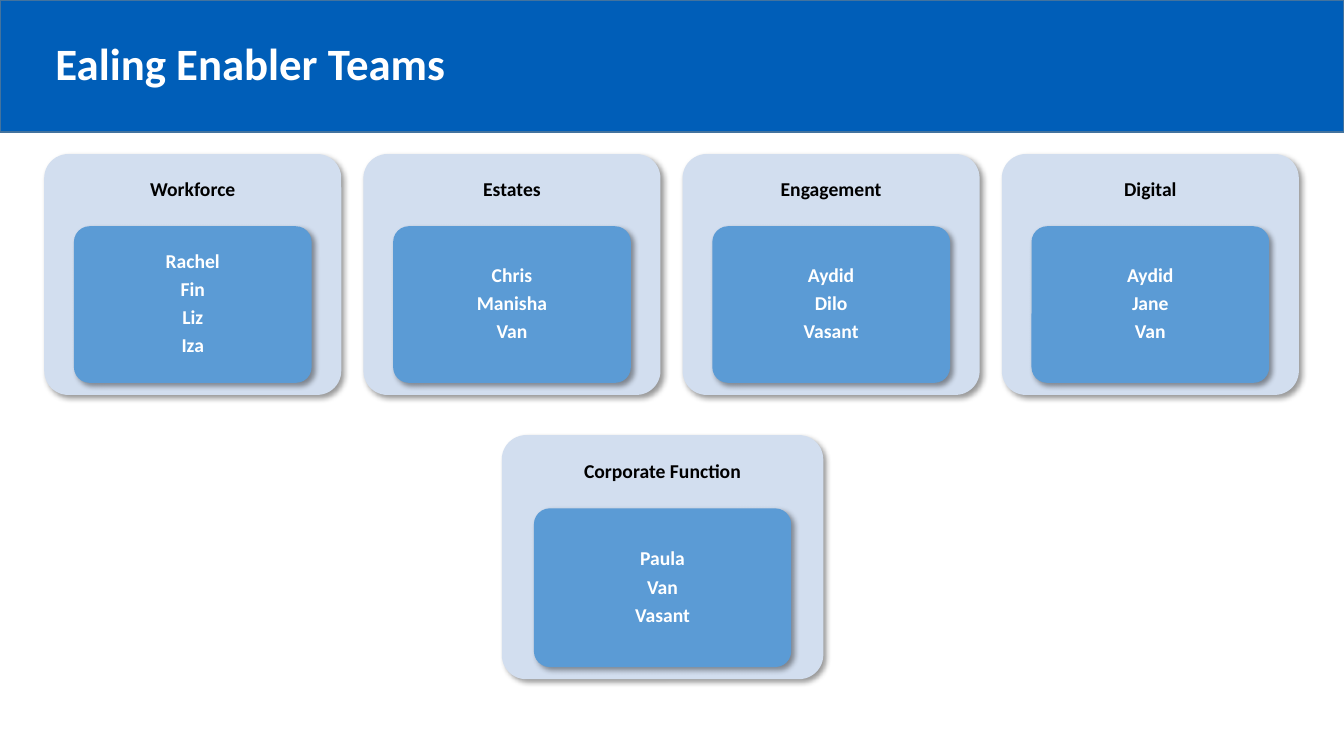
"""Build the Ealing Enabler Teams slide with python-pptx."""
from lxml import etree
from pptx import Presentation
from pptx.dml.color import RGBColor
from pptx.enum import shapes, text
from pptx.oxml import ns
from pptx.util import Pt

COLORS = {"band": "005EB8", "band_line": "43739E", "card": "D2DEEF",
          "names": "5B9BD5", "black": "000000", "white": "FFFFFF"}
FRAME = {"word_wrap": True, "auto_size": text.MSO_AUTO_SIZE.NONE,
         "vertical_anchor": text.MSO_ANCHOR.MIDDLE}
LABEL = {"alignment": text.PP_ALIGN.CENTER, "line_spacing": 0.9,
         "space_before": Pt(0), "space_after": Pt(4.9)}
TITLE = {"alignment": text.PP_ALIGN.LEFT, "line_spacing": 0.9,
         "space_before": Pt(0)}
TEAMS = [("Workforce", ["Rachel", "Fin", "Liz", "Iza"]),
         ("Estates", ["Chris", "Manisha", "Van"]),
         ("Engagement", ["Aydid", "Dilo", "Vasant"]),
         ("Digital", ["Aydid", "Jane", "Van"])]
CORPORATE = ("Corporate Function", ["Paula", "Van", "Vasant"])


def rgb(name):
    return RGBColor.from_string(COLORS[name])


def apply(target, values):
    for name, value in values.items():
        setattr(target, name, value)


def write(sp, lines, size, color, paragraph, inset):
    tf = sp.text_frame
    x, y = (Pt(v) for v in inset)
    apply(tf, {**FRAME, "margin_left": x, "margin_right": x,
               "margin_top": y, "margin_bottom": y})
    for i, line in enumerate(lines):
        p = tf.paragraphs[0] if i == 0 else tf.add_paragraph()
        apply(p, paragraph)
        r = p.add_run()
        r.text = line
        apply(r.font, {"name": "Calibri", "size": Pt(size), "bold": True})
        r.font.color.rgb = rgb(color)


def add_shadow(sp):
    effects = sp._element.spPr.find(ns.qn("a:effectLst"))
    shadow = etree.SubElement(effects, ns.qn("a:outerShdw"), {
        "blurRad": str(Pt(4)), "dist": str(Pt(3)), "dir": "2700000",
        "algn": "tl", "rotWithShape": "0"})
    color = etree.SubElement(shadow, ns.qn("a:srgbClr"), val=COLORS["black"])
    etree.SubElement(color, ns.qn("a:alpha"), val="40000")


def add_box(parent, kind, box, fill):
    sp = parent.add_shape(kind, *(Pt(v) for v in box))
    sp.shadow.inherit = False
    sp.fill.solid()
    sp.fill.fore_color.rgb = rgb(fill)
    sp.line.fill.background()
    return sp


def add_panel(parent, box, fill):
    sp = add_box(parent, shapes.MSO_SHAPE.ROUNDED_RECTANGLE, box, fill)
    sp.adjustments[0] = 0.1
    add_shadow(sp)
    return sp


def add_team(parent, team, left, top, width, height):
    heading, names = team
    add_panel(parent, (left, top, width, height), "card")
    label = parent.add_textbox(Pt(left), Pt(top), Pt(width), Pt(0.3 * height))
    write(label, [heading], 14, "black", LABEL, (4.2, 4.2))
    inner = (left + 0.1 * width, top + 0.3 * height, 0.8 * width, 0.65 * height)
    write(add_panel(parent, inner, "names"), names, 14, "white", LABEL, (2.8, 2.1))


def add_header(slide, title):
    band = add_box(slide.shapes, shapes.MSO_SHAPE.RECTANGLE, (0, 0, 960, 94.3), "band")
    band.line.color.rgb = rgb("band_line")
    band.line.width = Pt(1)
    sp = slide.shapes.title
    apply(sp, {"left": Pt(32.4), "top": Pt(25.9),
               "width": Pt(895.7), "height": Pt(42.5)})
    write(sp, [title], 32, "white", TITLE, (7.2, 3.6))
    sp._element.addprevious(band._element)


def main():
    prs = Presentation()
    prs.slide_width, prs.slide_height = Pt(960), Pt(540)
    slide = prs.slides.add_slide(prs.slide_layouts[5])
    add_header(slide, "Ealing Enabler Teams")
    row = slide.shapes.add_group_shape().shapes
    for i, team in enumerate(TEAMS):
        add_team(row, team, 31.6 + 228 * i, 110, 212.2, 172.1)
    add_team(slide.shapes.add_group_shape().shapes, CORPORATE,
             358.4, 310.8, 229.7, 174.4)
    prs.save("out.pptx")


if __name__ == "__main__":
    main()
